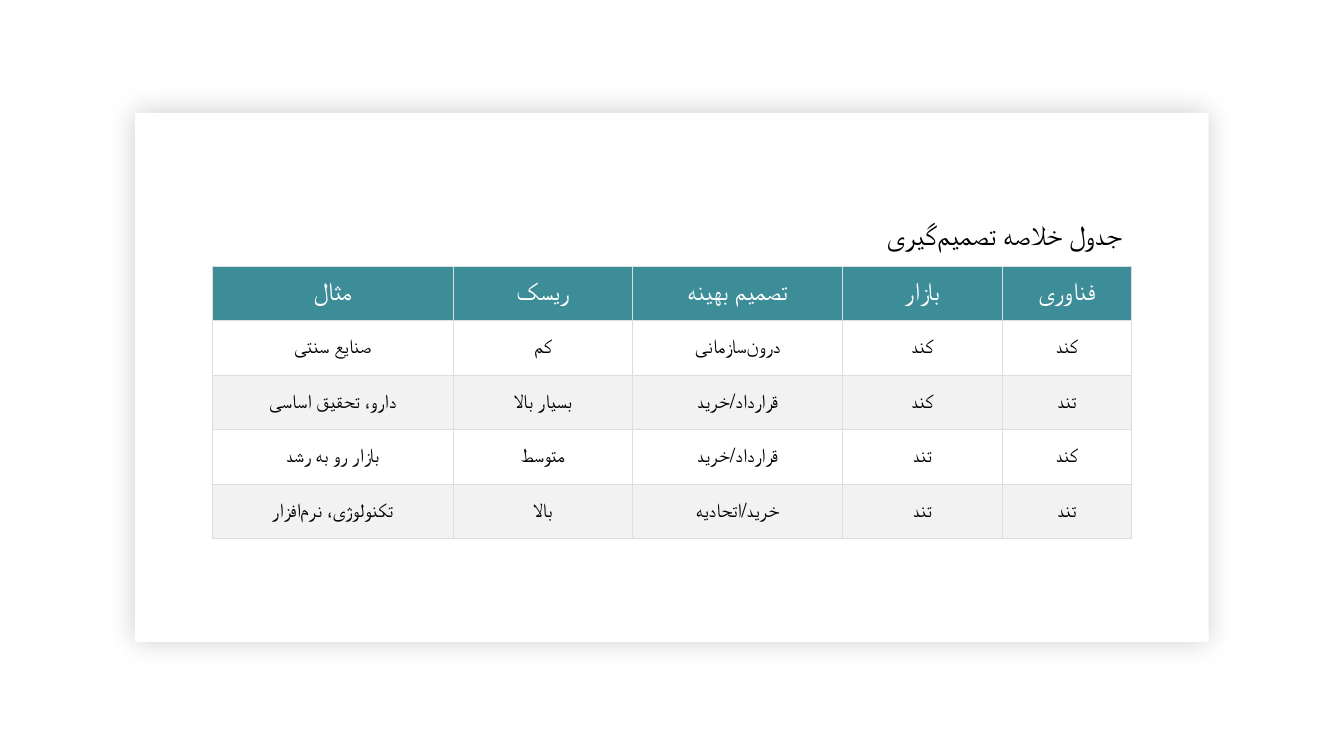
import lxml.etree
import pptx
import pptx.dml.color
import pptx.enum.shapes
import pptx.enum.text
import pptx.oxml
import pptx.oxml.ns
import pptx.util

Pt = pptx.util.Pt
RGB = pptx.dml.color.RGBColor
qn = pptx.oxml.ns.qn
ALIGN = pptx.enum.text.PP_ALIGN
ANCHOR = pptx.enum.text.MSO_ANCHOR

FONT = "Arial Narrow"
WHITE = RGB(0xFF, 0xFF, 0xFF)
BLACK = RGB(0x00, 0x00, 0x00)
TEAL = RGB(0x3D, 0x8D, 0x99)
BAND = RGB(0xF2, 0xF2, 0xF2)
GRID = RGB(0xDD, 0xDD, 0xDD)

ZWNJ = chr(0x200C)
TITLE = f"جدول خلاصه تصمیم{ZWNJ}گیری"
ROWS = [
    ["مثال", "ریسک", "تصمیم بهینه", "بازار", "فناوری"],
    ["صنایع سنتی", "کم", f"درون{ZWNJ}سازمانی", "کند", "کند"],
    ["دارو، تحقیق اساسی", "بسیار بالا", "قرارداد/خرید", "کند", "تند"],
    ["بازار رو به رشد", "متوسط", "قرارداد/خرید", "تند", "کند"],
    [f"تکنولوژی، نرم{ZWNJ}افزار", "بالا", "خرید/اتحادیه", "تند", "تند"],
]
COL_WIDTHS = [172.5, 128, 150, 114, 92.5]
ROW_HEIGHT = 39


def write(tf, text, size, color, align):
    p = tf.paragraphs[0]
    p.text = text
    p.alignment = align
    p._p.get_or_add_pPr().set("rtl", "1")
    p.font.name = FONT
    p.font.size = Pt(size)
    p.font.bold = False
    p.font.color.rgb = color
    return p


def add_card(slide):
    sp = slide.shapes.add_shape(pptx.enum.shapes.MSO_SHAPE.RECTANGLE,
                                Pt(96.5), Pt(80.6), Pt(766.8), Pt(378))
    sp.fill.solid()
    sp.fill.fore_color.rgb = WHITE
    sp.line.fill.background()
    sp.shadow.inherit = False
    effects = sp._element.spPr.find(qn("a:effectLst"))
    shadow = lxml.etree.SubElement(effects, qn("a:outerShdw"),
                                   blurRad=str(Pt(20)), dist="0", algn="ctr", rotWithShape="0")
    color = lxml.etree.SubElement(shadow, qn("a:srgbClr"), val=str(BLACK))
    lxml.etree.SubElement(color, qn("a:alpha"), val="20000")
    slide.shapes._spTree.insert(2, sp._element)


def set_title(slide):
    sp = slide.shapes.title
    sp.left, sp.top, sp.width, sp.height = Pt(584.6), Pt(139.7), Pt(224), Pt(40.3)
    tf = sp.text_frame
    tf.word_wrap = True
    tf.auto_size = pptx.enum.text.MSO_AUTO_SIZE.NONE
    tf.vertical_anchor = ANCHOR.TOP
    p = write(tf, TITLE, 20, BLACK, ALIGN.RIGHT)
    p.line_spacing = 1.5
    p.space_before = Pt(0)


def set_borders(cell):
    tcPr = cell._tc.get_or_add_tcPr()
    for i, side in enumerate(("lnL", "lnR", "lnT", "lnB")):
        ln = lxml.etree.Element(qn("a:" + side), w=str(Pt(0.75)))
        fill = lxml.etree.SubElement(ln, qn("a:solidFill"))
        lxml.etree.SubElement(fill, qn("a:srgbClr"), val=str(GRID))
        tcPr.insert(i, ln)


def format_cell(cell, text, row):
    cell.margin_left = cell.margin_right = Pt(5.8)
    cell.margin_top = cell.margin_bottom = Pt(5.8)
    cell.vertical_anchor = ANCHOR.MIDDLE
    header = row == 0
    write(cell.text_frame, text, 18 if header else 14, WHITE if header else BLACK, ALIGN.CENTER)
    if row % 2:
        cell.fill.background()
    else:
        cell.fill.solid()
        cell.fill.fore_color.rgb = TEAL if header else BAND
    set_borders(cell)


def add_decision_table(slide):
    table = slide.shapes.add_table(len(ROWS), len(COL_WIDTHS), Pt(151.4), Pt(190),
                                   Pt(sum(COL_WIDTHS)), Pt(ROW_HEIGHT * len(ROWS))).table
    table.horz_banding = False
    for col, width in zip(table.columns, COL_WIDTHS):
        col.width = Pt(width)
    for r, texts in enumerate(ROWS):
        table.rows[r].height = Pt(ROW_HEIGHT)
        for c, text in enumerate(texts):
            format_cell(table.cell(r, c), text, r)


def main():
    prs = pptx.Presentation()
    prs.slide_width, prs.slide_height = Pt(960), Pt(540)
    slide = prs.slides.add_slide(prs.slide_layouts[5])
    add_card(slide)
    set_title(slide)
    add_decision_table(slide)
    prs.save("out.pptx")


if __name__ == "__main__":
    main()
